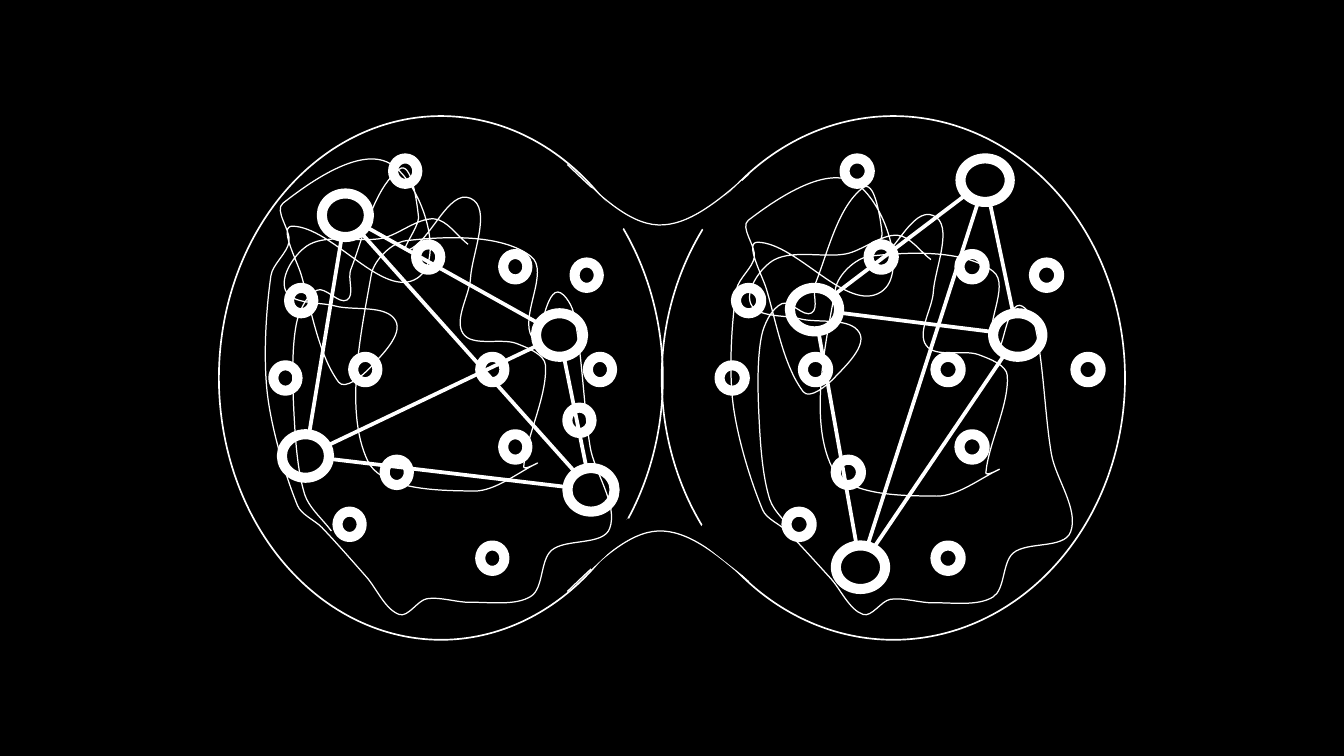
import itertools
import math

import lxml.etree
import pptx
import pptx.dml.color
import pptx.enum.shapes
import pptx.oxml.ns
import pptx.util

# All positions below are in units of 2.54 cm.
UNIT = 2.54
SLIDE_SIZE = (11.11, 6.25)
THEME = {
    "paper": pptx.dml.color.RGBColor(0, 0, 0),
    "ink": pptx.dml.color.RGBColor(255, 255, 255),
    "outline": 1, "node": 6, "thread": 0.75, "link": 2.25,
}
HUB = (0.39, 0.36)
NODE = (0.2, 0.21)
LEFT = {
    "cell": (1.81, 0.96, 3.67, 4.33),
    "thread": (2.12, 1.22, 2.92, 3.86),
    "hubs": [(2.66, 1.6), (2.33, 3.59), (4.69, 3.87), (4.43, 2.59)],
    "own_nodes": [(4.69, 3.37), (4.86, 2.95)],
    "node_shift": 0,
}
RIGHT = {
    "cell": (5.47, 0.96, 3.83, 4.33),
    "thread": (5.97, 1.38, 2.88, 3.7),
    "hubs": [(8.21, 2.59), (7.94, 1.31), (6.53, 2.38), (6.91, 4.51)],
    "own_nodes": [(8.89, 2.95)],
    "node_shift": 3.59,
}
# Nodes found in both cells, placed as in the left one.
SHARED_NODES = [
    (4.16, 2.1), (4.16, 3.59), (3.97, 4.51), (2.39, 2.38), (2.79, 4.23), (3.25, 1.31),
    (2.26, 3.02), (2.92, 2.95), (3.44, 2.02), (3.18, 3.8), (3.97, 2.95), (4.75, 2.17),
]
# Points the thread runs through, placed as in the left cell.
THREAD = [
    (2.74, 4.39), (2.52, 4.09), (2.43, 3.4), (2.45, 2.68), (2.62, 2.4), (2.87, 2.48),
    (2.9, 2.23), (3.3, 1.4), (3.46, 1.79), (3.37, 2.07), (3.89, 1.64), (3.89, 2.3),
    (3.83, 2.76), (4.27, 2.84), (4.51, 3.02), (4.33, 3.86), (4.44, 3.83), (3.92, 4.06),
    (3.04, 3.81), (3.07, 2.27), (3.36, 1.99), (4.39, 2.12), (4.4, 2.79), (4.59, 2.42),
    (4.74, 2.58), (4.88, 3.7), (5.04, 4.37), (4.56, 4.55), (4.39, 4.93), (3.89, 4.98),
    (3.53, 4.95), (3.3, 5.08), (3.03, 4.77), (2.66, 4.36), (2.46, 4.18), (2.21, 3.25),
    (2.24, 2.28), (2.39, 2), (2.34, 1.68), (3.22, 1.35), (3.45, 2.3), (2.42, 1.87),
    (2.49, 2.27), (2.8, 3.16), (3.06, 3.04), (3.27, 2.65), (2.77, 2.53), (2.36, 2.4),
    (2.56, 2.02), (3.16, 1.97), (3.59, 1.81), (3.87, 2.02),
]
# Control points of the upper bridge; the lower one mirrors it.
BRIDGE = [(4.69, 1.36), (4.94, 1.6), (5.19, 1.85), (5.44, 1.86),
          (5.69, 1.87), (5.94, 1.66), (6.19, 1.44)]
# Box and rotation of the masks that open the cells under each bridge.
LOWER_MASKS = [((5.9, 4.27, 0.17, 0.51), 308.2), ((4.99, 4.24, 0.1, 0.51), 46.8)]
UPPER_MASKS = [((4.9, 1.55, 0.17, 0.42), 313.9), ((5.93, 1.45, 0.1, 0.51), 46.8)]


def lengths(values):
    return [pptx.util.Cm(v * UNIT) for v in values]


def ink(sp, weight):
    sp.line.color.rgb = THEME["ink"]
    sp.line.width = pptx.util.Pt(THEME[weight])


def add_ring(shapes, box, weight):
    sp = shapes.add_shape(pptx.enum.shapes.MSO_SHAPE.OVAL, *lengths(box))
    sp.fill.background()
    sp.shadow.inherit = False
    ink(sp, weight)


def add_mask(shapes, box, rotation):
    sp = shapes.add_shape(pptx.enum.shapes.MSO_SHAPE.RECTANGLE, *lengths(box))
    sp.rotation = rotation
    sp.fill.solid()
    sp.fill.fore_color.rgb = THEME["paper"]
    sp.line.fill.background()
    sp.shadow.inherit = False


def add_link(shapes, hub_a, hub_b, size):
    """Join two hubs from rim to rim."""
    w, h = size
    dx, dy = hub_b[0] - hub_a[0], hub_b[1] - hub_a[1]
    trim = 0.5 / math.hypot(dx / w, dy / h)
    ends = [hub_a[0] + w / 2 + dx * trim, hub_a[1] + h / 2 + dy * trim,
            hub_b[0] + w / 2 - dx * trim, hub_b[1] + h / 2 - dy * trim]
    kind = pptx.enum.shapes.MSO_CONNECTOR.STRAIGHT
    sp = shapes.add_connector(kind, *lengths(ends))
    ink(sp, "link")
    lxml.etree.SubElement(sp._element.spPr, pptx.oxml.ns.qn("a:effectLst"))


def smooth(points):
    """Return Bézier control points of a smooth curve through the points."""
    tangents = []
    for i in range(len(points)):
        before, after = points[max(i - 1, 0)], points[min(i + 1, len(points) - 1)]
        span = math.dist(before, after)
        tangents.append([(b - a) / span for a, b in zip(before, after)])
    controls = [points[0]]
    for i, (a, b) in enumerate(itertools.pairwise(points)):
        reach = math.dist(a, b) * 0.3
        controls += [[p + t * reach for p, t in zip(a, tangents[i])],
                     [p - t * reach for p, t in zip(b, tangents[i + 1])], b]
    return controls


def add_curve(shapes, controls):
    """Draw a freeform, then merge each three line segments into one Bézier."""
    start, *rest = [lengths(point) for point in controls]
    builder = shapes.build_freeform(*start)
    builder.add_line_segments(rest, close=False)
    sp = builder.convert_to_shape()
    steps = sp._element.xpath(".//a:lnTo")
    for i in range(0, len(steps), 3):
        steps[i].tag = pptx.oxml.ns.qn("a:cubicBezTo")
        for step in steps[i + 1:i + 3]:
            steps[i].append(step[0])
            step.getparent().remove(step)
    sp.fill.background()
    sp.shadow.inherit = False
    ink(sp, "thread")


def add_cell(shapes, cell):
    stretch = cell["cell"][2] / LEFT["cell"][2]
    hub, node = [(w * stretch, h) for w, h in (HUB, NODE)]
    nodes = [(x * stretch + cell["node_shift"], y) for x, y in SHARED_NODES]
    add_ring(shapes, cell["cell"], "outline")
    for spots, size in ((cell["hubs"], hub), (nodes + cell["own_nodes"], node)):
        for spot in spots:
            add_ring(shapes, spot + size, "node")
    x, y, w, h = cell["thread"]
    x0, y0, w0, h0 = LEFT["thread"]
    add_curve(shapes, smooth([(x + (px - x0) * w / w0, y + (py - y0) * h / h0)
                              for px, py in THREAD]))
    for hub_a, hub_b in itertools.combinations(cell["hubs"], 2):
        add_link(shapes, hub_a, hub_b, hub)


def main():
    prs = pptx.Presentation()
    prs.slide_width, prs.slide_height = lengths(SLIDE_SIZE)
    s = prs.slides.add_slide(prs.slide_layouts[6])
    s.background.fill.solid()
    s.background.fill.fore_color.rgb = THEME["paper"]
    shapes = s.shapes.add_group_shape().shapes
    for cell in (RIGHT, LEFT):
        add_cell(shapes, cell)
    lower_bridge = [(x, SLIDE_SIZE[1] - y) for x, y in BRIDGE]
    for bridge, masks in ((lower_bridge, LOWER_MASKS), (BRIDGE, UPPER_MASKS)):
        add_curve(shapes, bridge)
        for box, rotation in masks:
            add_mask(shapes, box, rotation)
    prs.save("out.pptx")


if __name__ == "__main__":
    main()
